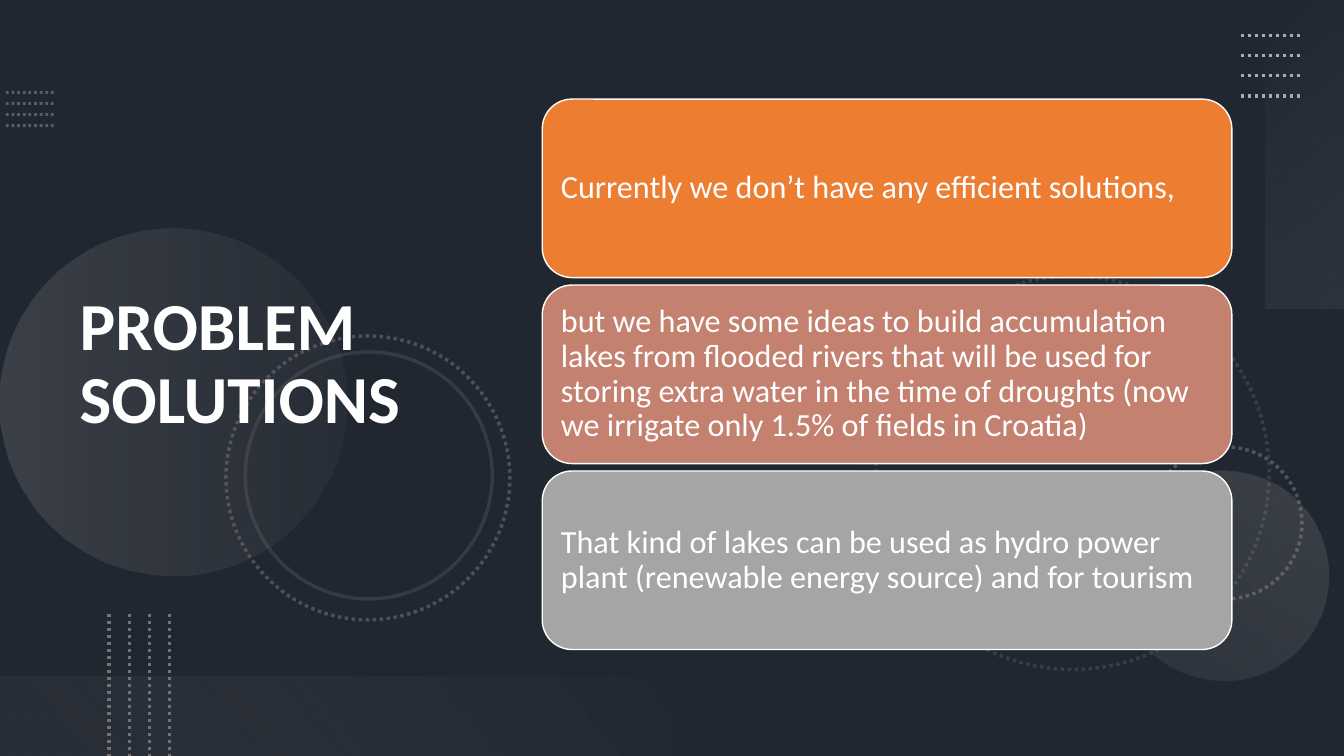
from lxml.etree import SubElement
from pptx import Presentation
from pptx.dml.color import RGBColor
from pptx.enum.dml import MSO_LINE_DASH_STYLE as Dash
from pptx.enum.shapes import MSO_CONNECTOR as Connector, MSO_SHAPE as Shape
from pptx.enum.text import MSO_ANCHOR as Anchor, PP_ALIGN as Align
from pptx.oxml.ns import qn
from pptx.util import Emu, Inches, Pt

COLUMNS, ROWS = 160, 90
CELL = Inches(7.5) / ROWS
WHITE, SILVER, STONE = "FFFFFF", "AFABAB", "767171"


def grid(*cells):
    """Turn counts of grid cells into lengths."""
    return [Emu(round(count * CELL)) for count in cells]


def color(value):
    """Turn a hex string into a colour."""
    return RGBColor.from_string(value)


def fade(item, *opacities):
    """Set the opacity, in percent, of each colour of a shape in turn."""
    for node, opacity in zip(item._element.spPr.iter(qn("a:srgbClr")), opacities):
        SubElement(node, qn("a:alpha"), val=str(opacity * 1000))


def add_outline(line, value, width, dash=None):
    """Style an outline or a connector."""
    line.color.rgb = color(value)
    line.width = Pt(width)
    if dash:
        line.dash_style = dash


def add_figure(page, kind, cells, rotation=0, fill=None):
    """Add a preset shape without a shadow or an outline."""
    shape = page.shapes.add_shape(kind, *grid(*cells))
    shape.shadow.inherit = False
    shape.rotation = rotation
    shape.line.fill.background()
    if fill:
        shape.fill.solid()
        shape.fill.fore_color.rgb = color(fill)
    else:
        shape.fill.background()
    return shape


def add_glow(page, kind, cells, rotation, angle, stops):
    """Add a shape filled with a translucent gradient."""
    shape = add_figure(page, kind, cells, rotation)
    shape.fill.gradient()
    shape.fill.gradient_angle = 360 - angle
    for stop, (position, value, _) in zip(shape.fill.gradient_stops, stops):
        stop.position = position
        stop.color.rgb = color(value)
    fade(shape, *[opacity for _, _, opacity in stops])


def add_ring(page, left, top, size, rotation, opacity, dash=Dash.ROUND_DOT):
    """Add a circle that has only an outline."""
    ring = add_figure(page, Shape.OVAL, (left, top, size, size), rotation)
    add_outline(ring.line, STONE, 2.5, dash)
    fade(ring, opacity)


def add_dots(page, start, end, step, value, width=2.5, opacity=100):
    """Add four parallel dotted lines, each one step from the last."""
    for index in range(4):
        shift_x, shift_y = step[0] * index, step[1] * index
        line = page.shapes.add_connector(Connector.STRAIGHT, *grid(
            start[0] + shift_x, start[1] + shift_y,
            end[0] + shift_x, end[1] + shift_y))
        add_outline(line.line, value, width, Dash.ROUND_DOT)
        fade(line, opacity)
        SubElement(line._element.spPr, qn("a:effectLst"))


def write(box, text, size, bold=False, side=0.1, edge=0.1):
    """Write white, left-aligned text in the middle of a box."""
    frame = box.text_frame
    frame.word_wrap = True
    frame.vertical_anchor = Anchor.MIDDLE
    frame.margin_left = frame.margin_right = Inches(side)
    frame.margin_top = frame.margin_bottom = Inches(edge)
    para = frame.paragraphs[0]
    para.alignment = Align.LEFT
    para.line_spacing = 0.9
    span = para.add_run()
    span.text = text
    span.font.name = "Calibri"
    span.font.size = Pt(size)
    span.font.bold = bold
    span.font.color.rgb = color(WHITE)


def add_decoration(page):
    """Add the dotted lines, circles and bands behind the content."""
    add_dots(page, (0.7, 11), (6.4, 11), (0, 1.32), "8497B0", 2, 50)
    add_ring(page, 104.3, 32.9, 46.8, 75, 30)
    add_ring(page, 136.9, 53.2, 18.1, 270, 60)
    add_glow(page, Shape.OVAL, (0, 27.2, 41.3, 41.3), 270, 90,
             [(0, SILVER, 20), (1, STONE, 10)])
    add_glow(page, Shape.OVAL, (133.2, 56, 25, 25), 210, 90,
             [(0, SILVER, 10), (1, SILVER, 20)])
    add_ring(page, 26.9, 40, 33.8, 75, 55)
    add_ring(page, 29.2, 41.9, 29.4, 75, 25, dash=None)
    add_glow(page, Shape.RECTANGLE, (137, 13.7, 36.7, 9.4), 270, 140,
             [(0, "F5F5F5", 0), (1, SILVER, 10)])
    add_dots(page, (147.7, 4.2), (154.9, 4.2), (0, 2.4), SILVER)
    add_glow(page, Shape.RECTANGLE, (0, 80.6, COLUMNS / 2, 9.4), 180, 140,
             [(0.1, STONE, 10), (1, "F1F0F0", 0)])
    add_dots(page, (13, 73.1), (13, ROWS), (2.4, 0), STONE)


def add_cards(page, cards):
    """Stack the rounded cards at equal distances."""
    for index, (fill, text) in enumerate(cards):
        card = add_figure(page, Shape.ROUNDED_RECTANGLE,
                          (64.56, 11.8 + 22.14 * index, 82.1, 21.25), fill=fill)
        add_outline(card.line, WHITE, 1)
        write(card, text, 23)


def main():
    """Build the slide and save it."""
    deck = Presentation()
    deck.slide_width, deck.slide_height = grid(COLUMNS, ROWS)
    page = deck.slides.add_slide(deck.slide_layouts[6])
    page.background.fill.solid()
    page.background.fill.fore_color.rgb = color("44546A")
    shade = add_figure(page, Shape.RECTANGLE, (0, 0, COLUMNS, ROWS), fill="000000")
    fade(shade, 53)
    add_decoration(page)
    title = page.shapes.add_textbox(*grid(8.3, 6.5, 55.1, 74))
    write(title, "PROBLEM SOLUTIONS", 48, bold=True, edge=0.05)
    add_cards(page, [
        ("ED7D31", "Currently we don’t have any efficient solutions,"),
        ("C48170", "but we have some ideas to build accumulation lakes from "
                   "flooded rivers that will be used for storing extra water in "
                   "the time of droughts (now we irrigate only 1.5% of fields "
                   "in Croatia)"),
        ("A5A5A5", "That kind of lakes can be used as hydro power plant "
                   "(renewable energy source) and for tourism"),
    ])
    deck.save("out.pptx")


if __name__ == "__main__":
    main()
